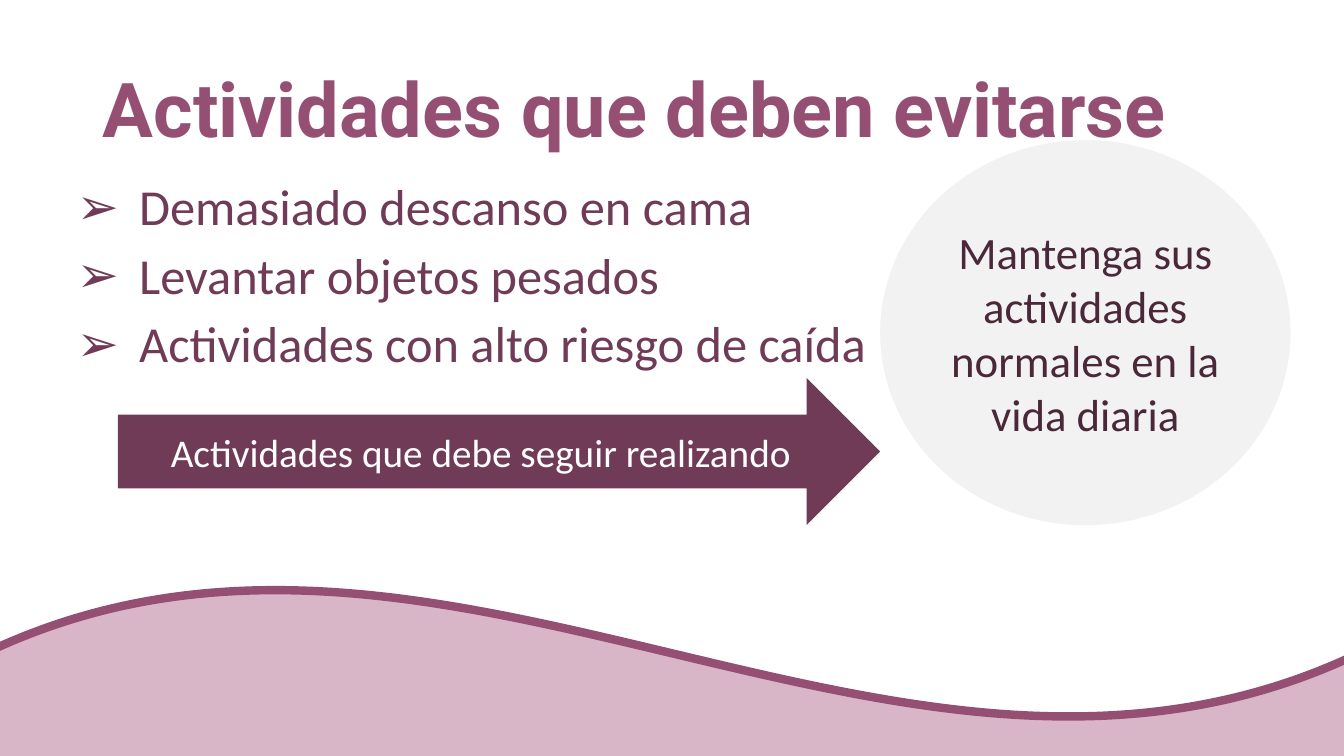
"""Build the slide on activities to avoid and activities to keep doing."""
from dataclasses import dataclass

from lxml import etree
from pptx import Presentation
from pptx.dml.color import RGBColor
from pptx.enum.shapes import MSO_SHAPE
from pptx.enum.text import MSO_ANCHOR, MSO_AUTO_SIZE, PP_ALIGN
from pptx.oxml.ns import qn
from pptx.util import Inches, Pt

WAVE, ELLIPSE, ARROW = MSO_SHAPE.WAVE, MSO_SHAPE.OVAL, MSO_SHAPE.RIGHT_ARROW
LEFT, CENTER = PP_ALIGN.LEFT, PP_ALIGN.CENTER
TOP, MIDDLE = MSO_ANCHOR.TOP, MSO_ANCHOR.MIDDLE
NO_AUTOFIT = MSO_AUTO_SIZE.NONE

HEADING = "Actividades que deben evitarse"
AVOID = [
    "Demasiado descanso en cama",
    "Levantar objetos pesados",
    "Actividades con alto riesgo de caída",
]
KEEP_DOING = "Actividades que debe seguir realizando"
ADVICE = "Mantenga sus actividades normales en la vida diaria"

SLIDE_SIZE = (13.33, 7.5)
HEADING_BOX = (0.92, 0.4, 11.5, 1.45)
AVOID_BOX = (0.53, 1.76, 8.33, 3.98)
ARROW_BOX = (1.17, 3.75, 7.56, 1.46)
ADVICE_BOX = (ARROW_BOX[0] + ARROW_BOX[2], 1.39, 4.07, 3.82)
WAVE_BOX = (-0.15, 5.83, 13.63, 5.21)


@dataclass(frozen=True)
class Theme:
    """Colours, fonts and type sizes of the slide."""
    accent: str = "954F72"
    plum: str = "703B56"
    dark: str = "4A2839"
    pink: str = "D8B5C7"
    grey: str = "F2F2F2"
    white: str = "FFFFFF"
    heading_font: str = "Roboto"
    body_font: str = "Calibri"
    heading_size: int = 54
    list_size: int = 36
    advice_size: int = 32
    arrow_size: int = 28
    wave_line: int = 6


THEME = Theme()


def rgb(code):
    """Turn a hex code into a colour."""
    return RGBColor.from_string(code)


def add_bullet(paragraph, char):
    """Give a paragraph a hanging bullet."""
    properties = paragraph._p.get_or_add_pPr()
    properties.set("marL", str(Inches(0.75)))
    properties.set("indent", str(Inches(-0.62)))
    etree.SubElement(properties, qn("a:buFont")).set("typeface", "Arial")
    etree.SubElement(properties, qn("a:buChar")).set("char", char)


def write(holder, lines, *, size, color, font=THEME.body_font, bold=False,
          align=CENTER, anchor=MIDDLE, spacing=1.0, gap=0, bullet=None):
    """Write lines into a shape as formatted paragraphs."""
    frame = holder.text_frame
    frame.word_wrap = True
    frame.auto_size = NO_AUTOFIT
    frame.vertical_anchor = anchor
    for index, line in enumerate(lines):
        paragraph = frame.add_paragraph() if index else frame.paragraphs[0]
        if bullet:
            add_bullet(paragraph, bullet)
        paragraph.alignment = align
        paragraph.line_spacing = spacing
        paragraph.space_before = Pt(gap if index else 0)
        run = paragraph.add_run()
        run.text = line
        run.font.name = font
        run.font.size = Pt(size)
        run.font.bold = bold
        run.font.color.rgb = rgb(color)


def place(holder, box):
    """Move a placeholder to a box given in inches."""
    holder.left, holder.top, holder.width, holder.height = map(Inches, box)


def add_figure(slide, preset, box, fill, line=None):
    """Add a flat preset shape, outlined only when a line colour is given."""
    figure = slide.shapes.add_shape(preset, *map(Inches, box))
    figure.shadow.inherit = False
    figure.fill.solid()
    figure.fill.fore_color.rgb = rgb(fill)
    if line:
        figure.line.color.rgb = rgb(line)
        figure.line.width = Pt(THEME.wave_line)
    else:
        figure.line.fill.background()
    return figure


def main():
    """Build and save the presentation."""
    deck = Presentation()
    deck.slide_width, deck.slide_height = map(Inches, SLIDE_SIZE)
    slide = deck.slides.add_slide(deck.slide_layouts[1])
    heading, avoid = slide.shapes.title, slide.placeholders[1]

    wave = add_figure(slide, WAVE, WAVE_BOX, THEME.pink, line=THEME.accent)
    heading._element.addprevious(wave._element)

    place(heading, HEADING_BOX)
    write(heading, [HEADING], size=THEME.heading_size, color=THEME.accent,
          font=THEME.heading_font, bold=True, align=LEFT, spacing=0.9)
    place(avoid, AVOID_BOX)
    write(avoid, AVOID, size=THEME.list_size, color=THEME.plum, align=LEFT,
          anchor=TOP, spacing=0.9, gap=10, bullet="➢")

    advice = add_figure(slide, ELLIPSE, ADVICE_BOX, THEME.grey)
    write(advice, [ADVICE], size=THEME.advice_size, color=THEME.dark)
    arrow = add_figure(slide, ARROW, ARROW_BOX, THEME.plum)
    write(arrow, [KEEP_DOING], size=THEME.arrow_size, color=THEME.white)

    deck.save("out.pptx")


if __name__ == "__main__":
    main()
